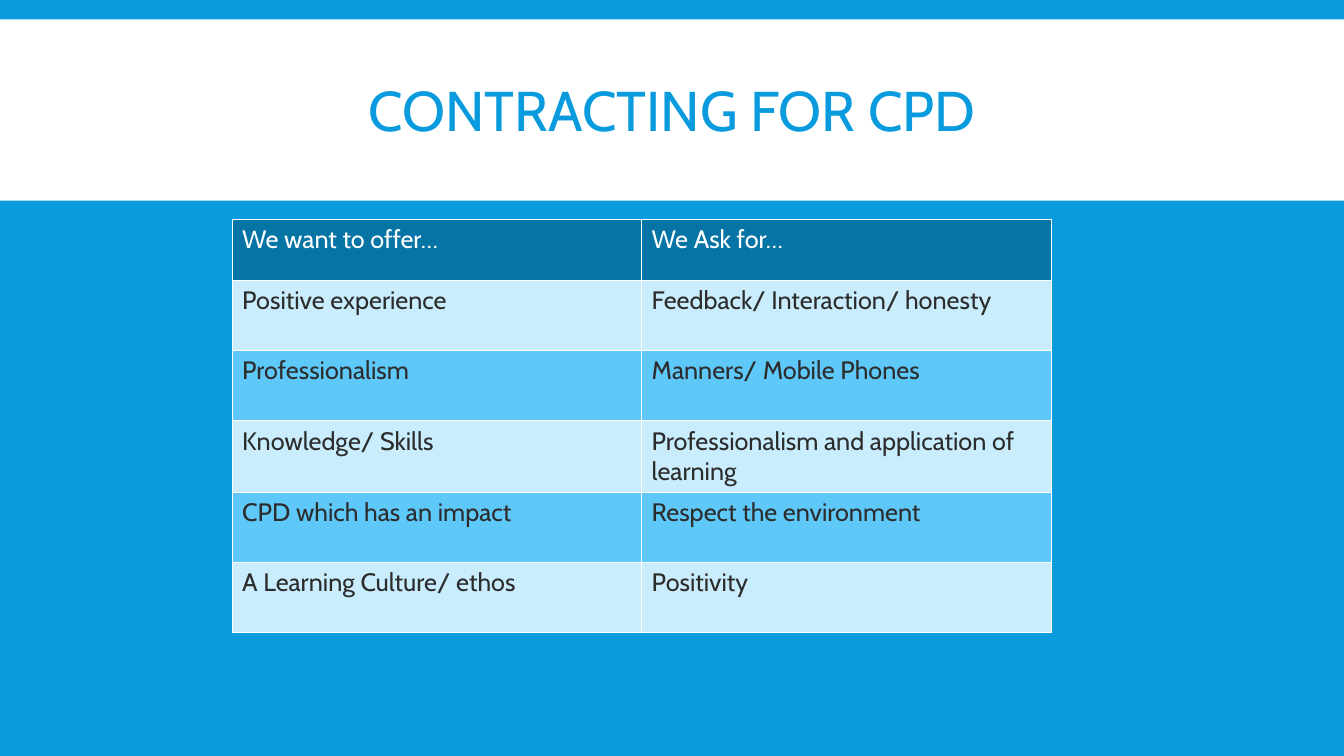
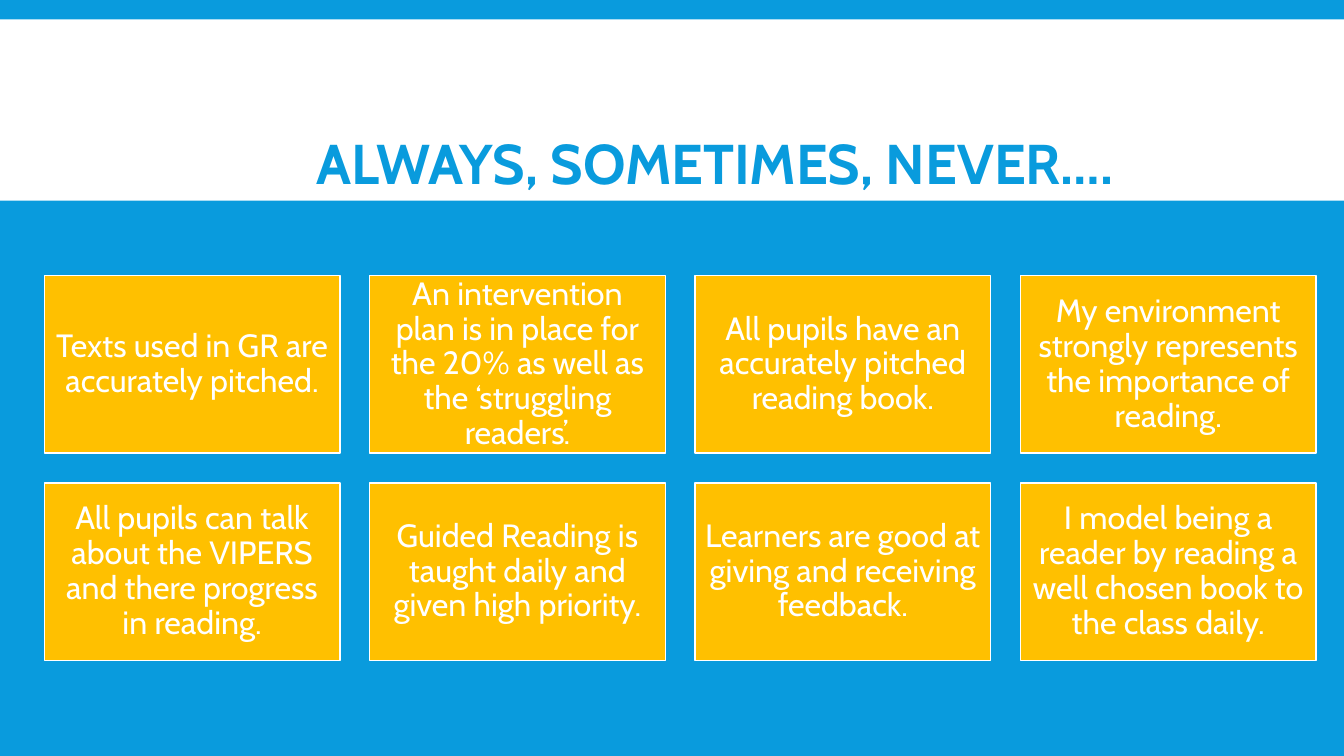
"""Build two training slides: a CPD contract table and a grid of reading statements."""
from lxml.etree import SubElement
from pptx import Presentation
from pptx.dml.color import RGBColor as RGB
from pptx.enum.shapes import MSO_SHAPE as Shape
from pptx.enum.text import MSO_ANCHOR as Anchor, MSO_AUTO_SIZE as AutoSize, PP_ALIGN as Align
from pptx.oxml.ns import qn
from pptx.util import Cm, Pt

COLORS = {
    "blue": "099BDD",
    "white": "FFFFFF",
    "header": "0774A6",
    "pale": "C9EDFD",
    "sky": "5EC8F8",
    "ink": "2C2C2C",
    "amber": "FFC000",
}
FONT = "Cabin"


def add_text(frame, text, size, color, bold=False, align=Align.LEFT, spacing=1.0):
    paragraph = frame.paragraphs[0]
    paragraph.alignment = align
    paragraph.line_spacing = spacing
    run = paragraph.add_run()
    run.text = text
    run.font.name = FONT
    run.font.size = Pt(size)
    run.font.bold = bold
    run.font.color.rgb = RGB.from_string(COLORS[color])


def add_titled_slide(text, left, top, bold=False, align=Align.LEFT):
    slide = prs.slides.add_slide(prs.slide_layouts[5])
    band = slide.shapes.add_shape(Shape.RECTANGLE, 0, Cm(0.49), prs.slide_width, Cm(4.57))
    band.shadow.inherit = False
    band.fill.solid()
    band.fill.fore_color.rgb = RGB.from_string(COLORS["white"])
    band.line.fill.background()
    slide.shapes._spTree.insert(2, band._element)

    title = slide.shapes.title
    title.left, title.top, title.width, title.height = Cm(left), Cm(top), Cm(27.18), Cm(4.19)
    frame = title.text_frame
    frame.auto_size = AutoSize.NONE
    frame.vertical_anchor = Anchor.MIDDLE
    add_text(frame, text, 40, "blue", bold, align, 0.85)
    return slide


prs = Presentation()
prs.slide_width, prs.slide_height = Cm(33.87), Cm(19.05)
backdrop = prs.slide_master.background.fill
backdrop.solid()
backdrop.fore_color.rgb = RGB.from_string(COLORS["blue"])

contract_slide = add_titled_slide("CONTRACTING FOR CPD", 3.35, 0.79, align=Align.CENTER)
contract = [
    ("We want to offer…", "We Ask for…"),
    ("Positive experience", "Feedback/ Interaction/ honesty"),
    ("Professionalism", "Manners/ Mobile Phones"),
    ("Knowledge/ Skills", "Professionalism and application of learning"),
    ("CPD which has an impact", "Respect the environment"),
    ("A Learning Culture/ ethos", "Positivity"),
]
table = contract_slide.shapes.add_table(
    len(contract), 2, Cm(5.85), Cm(5.53), Cm(20.64), Cm(10.38)).table
for column in table.columns:
    column.width = Cm(10.32)
for row, entries in enumerate(contract):
    table.rows[row].height = Cm(1.77 if row else 1.53)
    if row == 0:
        shade, ink = "header", "white"
    else:
        shade, ink = ("pale" if row % 2 else "sky"), "ink"
    for col, entry in enumerate(entries):
        cell = table.cell(row, col)
        add_text(cell.text_frame, entry, 18, ink)
        borders = cell._tc.get_or_add_tcPr()
        for side in ("a:lnL", "a:lnR", "a:lnT", "a:lnB"):
            edge = SubElement(borders, qn(side), w=str(Pt(1)))
            SubElement(SubElement(edge, qn("a:solidFill")), qn("a:srgbClr"), val=COLORS["white"])
        cell.fill.solid()
        cell.fill.fore_color.rgb = RGB.from_string(COLORS[shade])

statement_slide = add_titled_slide("ALWAYS, SOMETIMES, NEVER….", 5.18, 1.4, bold=True)
heading = statement_slide.shapes.title.text_frame
heading.margin_left, heading.margin_top = Cm(2.79), Cm(1.57)
statements = [
    "Texts used in GR are accurately pitched.",
    "An intervention plan is in place for the 20% as well as the ‘struggling readers’.",
    "All pupils have an accurately pitched reading book.",
    "My environment strongly represents the importance of reading.",
    "All pupils can talk about the VIPERS and there progress in reading.",
    "Guided Reading is taught daily and given high priority.",
    "Learners are good at giving and receiving feedback.",
    "I model being a reader by reading a well chosen book to the class daily.",
]
CARD_WIDTH, CARD_HEIGHT, GAP = 7.45, 4.47, 0.75
for index, statement in enumerate(statements):
    row, col = divmod(index, 4)
    card = statement_slide.shapes.add_shape(
        Shape.RECTANGLE,
        Cm(1.12 + col * (CARD_WIDTH + GAP)), Cm(6.95 + row * (CARD_HEIGHT + GAP)),
        Cm(CARD_WIDTH), Cm(CARD_HEIGHT))
    card.shadow.inherit = False
    card.fill.solid()
    card.fill.fore_color.rgb = RGB.from_string(COLORS["amber"])
    card.line.color.rgb = RGB.from_string(COLORS["white"])
    card.line.width = Pt(1)
    frame = card.text_frame
    frame.word_wrap = True
    frame.vertical_anchor = Anchor.MIDDLE
    frame.margin_left = frame.margin_right = frame.margin_top = frame.margin_bottom = Cm(0.25)
    add_text(frame, statement, 23, "white", align=Align.CENTER, spacing=0.9)

prs.save("out.pptx")
